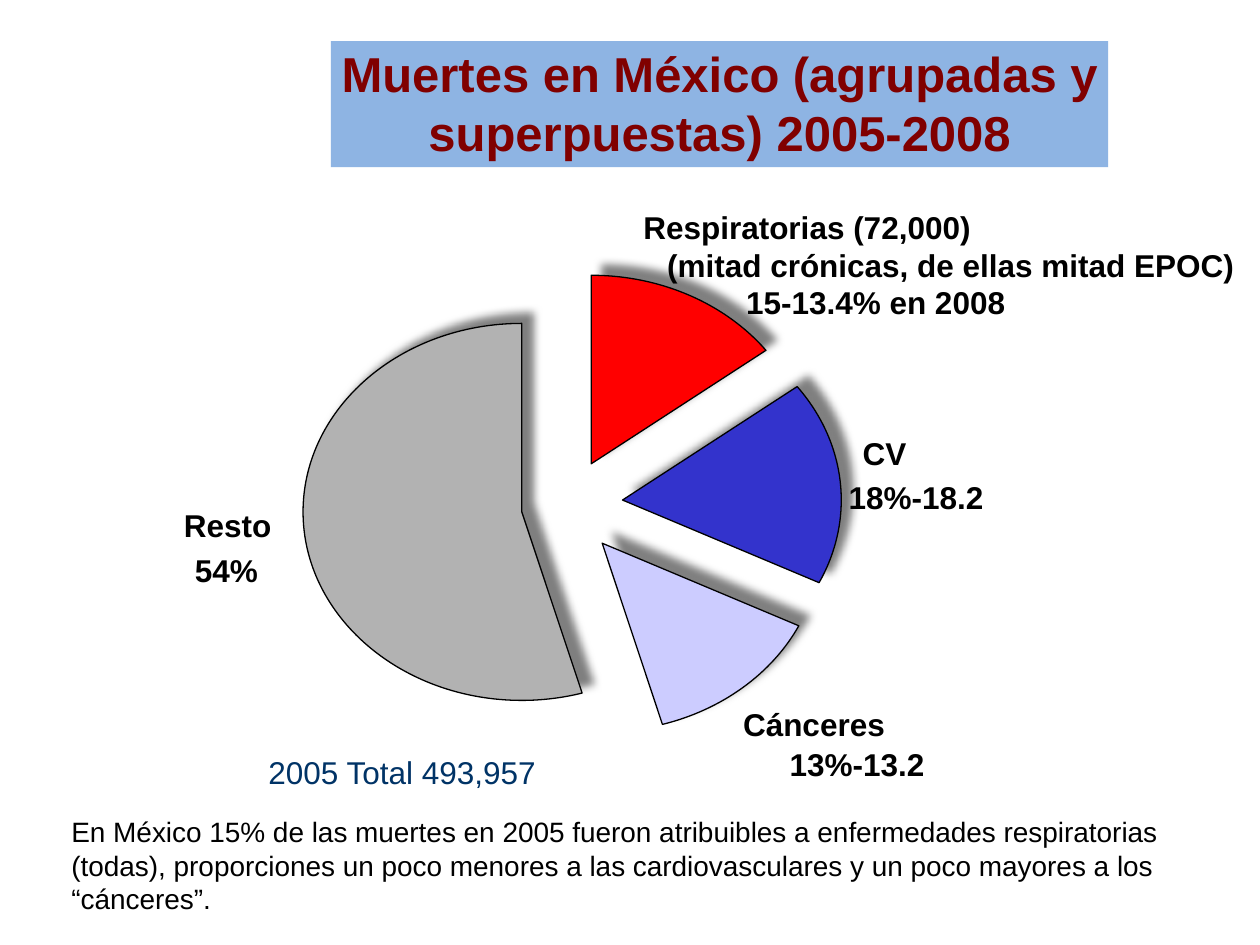
from math import cos, radians, sin, tan

from lxml.etree import SubElement
from pptx import Presentation
from pptx.dml.color import RGBColor
from pptx.enum.text import MSO_ANCHOR, MSO_AUTO_SIZE, PP_ALIGN
from pptx.oxml.ns import qn
from pptx.util import Cm, Pt

TITLE = "Muertes en México (agrupadas y superpuestas) 2005-2008"
TOTAL = "2005 Total 493,957"
NOTE = ("En México 15% de las muertes en 2005 fueron atribuibles a enfermedades "
        "respiratorias (todas), proporciones un poco menores a las cardiovasculares "
        "y un poco mayores a los “cánceres”.")

# Slices: colour, apex in cm, angles in degrees clockwise from the top,
# with each arc divided where it crosses a quadrant
RADIUS_X, RADIUS_Y = 4.41, 3.8
SLICES = [
    ("FF0000", (11.92, 9.35), (0, 53)),
    ("3333CC", (12.55, 10.08), (53, 90, 116)),
    ("CCCCFF", (12.14, 10.95), (116, 164)),
    ("B2B2B2", (10.52, 10.32), (164, 180, 270, 360)),
]

# Labels: lines, left, top, width in cm
LABELS = [
    (["Respiratorias (72,000)"], 12.97, 4.19, 7),
    (["(mitad crónicas, de ellas mitad EPOC)", "15-13.4% en 2008"], 13.45, 4.95, 11.8),
    (["CV"], 17.39, 8.74, 1.2),
    (["18%-18.2"], 17.11, 9.64, 3),
    (["Cánceres"], 14.98, 14.22, 3.2),
    (["13%-13.2"], 15.92, 15.01, 3),
    (["Resto"], 3.71, 10.2, 2),
    (["54%"], 3.93, 11.1, 1.6),
]
LINE_HEIGHT = 0.77
SECOND_LINE_INDENT = 1.59


def color(value):
    return RGBColor.from_string(value)


def place(shape, left, top, width, height):
    shape.left, shape.top = Cm(left), Cm(top)
    shape.width, shape.height = Cm(width), Cm(height)


def write(shape, text, size, text_color, bold=False, align=PP_ALIGN.LEFT):
    shape.text_frame.text = text
    for paragraph in shape.text_frame.paragraphs:
        paragraph.alignment = align
        for run in paragraph.runs:
            run.font.name = "Arial"
            run.font.size = Pt(size)
            run.font.bold = bold
            run.font.color.rgb = color(text_color)


def fill(shape, value):
    shape.fill.solid()
    shape.fill.fore_color.rgb = color(value)


def add_text(slide, text, box, size, text_color, **style):
    shape = slide.shapes.add_textbox(*map(Cm, box))
    shape.text_frame.word_wrap = True
    write(shape, text, size, text_color, **style)
    return shape


def add_shadow(shape):
    """Soft half-transparent shadow towards the upper right."""
    effects = SubElement(shape._element.spPr, qn("a:effectLst"))
    shadow = SubElement(effects, qn("a:outerShdw"), blurRad=str(Pt(5)), dist=str(Pt(8.5)),
                        dir=str(315 * 60000), algn="ctr", rotWithShape="0")
    shadow_color = SubElement(shadow, qn("a:srgbClr"), val="000000")
    SubElement(shadow_color, qn("a:alpha"), val="50000")


def arc_points(apex, angles):
    """Start of the arc, then two control points and an end for each part."""
    def point(angle, pull=0):
        across = sin(angle) + pull * cos(angle)
        down = pull * sin(angle) - cos(angle)
        return Cm(apex[0] + RADIUS_X * across), Cm(apex[1] + RADIUS_Y * down)

    turns = [radians(angle) for angle in angles]
    points = [point(turns[0])]
    for start, end in zip(turns, turns[1:]):
        pull = 4 / 3 * tan((end - start) / 4)
        points += [point(start, pull), point(end, -pull), point(end)]
    return points


def curve_arc(shape):
    """Turn every three lines after the first one into a Bézier curve."""
    lines = list(shape._element.spPr.iter(qn("a:lnTo")))[1:]
    for index in range(0, len(lines), 3):
        outline = lines[index].getparent()
        curve = outline.makeelement(qn("a:cubicBezTo"))
        lines[index].addprevious(curve)
        for line in lines[index:index + 3]:
            curve.append(line[0])
            outline.remove(line)


def add_slice(slide, slice_color, apex, angles):
    builder = slide.shapes.build_freeform(*map(Cm, apex))
    builder.add_line_segments(arc_points(apex, angles), close=True)
    shape = builder.convert_to_shape()
    curve_arc(shape)
    fill(shape, slice_color)
    shape.line.color.rgb = color("000000")
    shape.line.width = Pt(0.75)
    add_shadow(shape)


def add_label(slide, lines, left, top, width):
    box = (left, top, width, LINE_HEIGHT * len(lines))
    shape = add_text(slide, "\n".join(lines), box, 18, "000000", bold=True)
    frame = shape.text_frame
    frame.margin_left = frame.margin_right = frame.margin_top = frame.margin_bottom = 0
    for paragraph in frame.paragraphs[1:]:
        paragraph._p.get_or_add_pPr().set("marL", str(Cm(SECOND_LINE_INDENT)))


def main():
    presentation = Presentation()
    presentation.slide_width, presentation.slide_height = Cm(25.4), Cm(19.05)
    slide = presentation.slides.add_slide(presentation.slide_layouts[5])

    title = slide.shapes.title
    place(title, 6.67, 0.83, 15.67, 2.54)
    fill(title, "8EB4E3")
    write(title, TITLE, 28, "800000", bold=True, align=PP_ALIGN.CENTER)
    title.text_frame.auto_size = MSO_AUTO_SIZE.NONE
    title.text_frame.vertical_anchor = MSO_ANCHOR.BOTTOM
    title.text_frame.margin_left = title.text_frame.margin_right = 0

    total = add_text(slide, TOTAL, (5.03, 15.06, 6.15, 1.02), 18, "003366",
                     align=PP_ALIGN.CENTER)
    fill(total, "FFFFFF")
    for pie_slice in SLICES:
        add_slice(slide, *pie_slice)
    for label in LABELS:
        add_label(slide, *label)
    add_text(slide, NOTE, (1.19, 16.3, 22.53, 2.31), 16, "000000")

    presentation.save("out.pptx")


if __name__ == "__main__":
    main()
